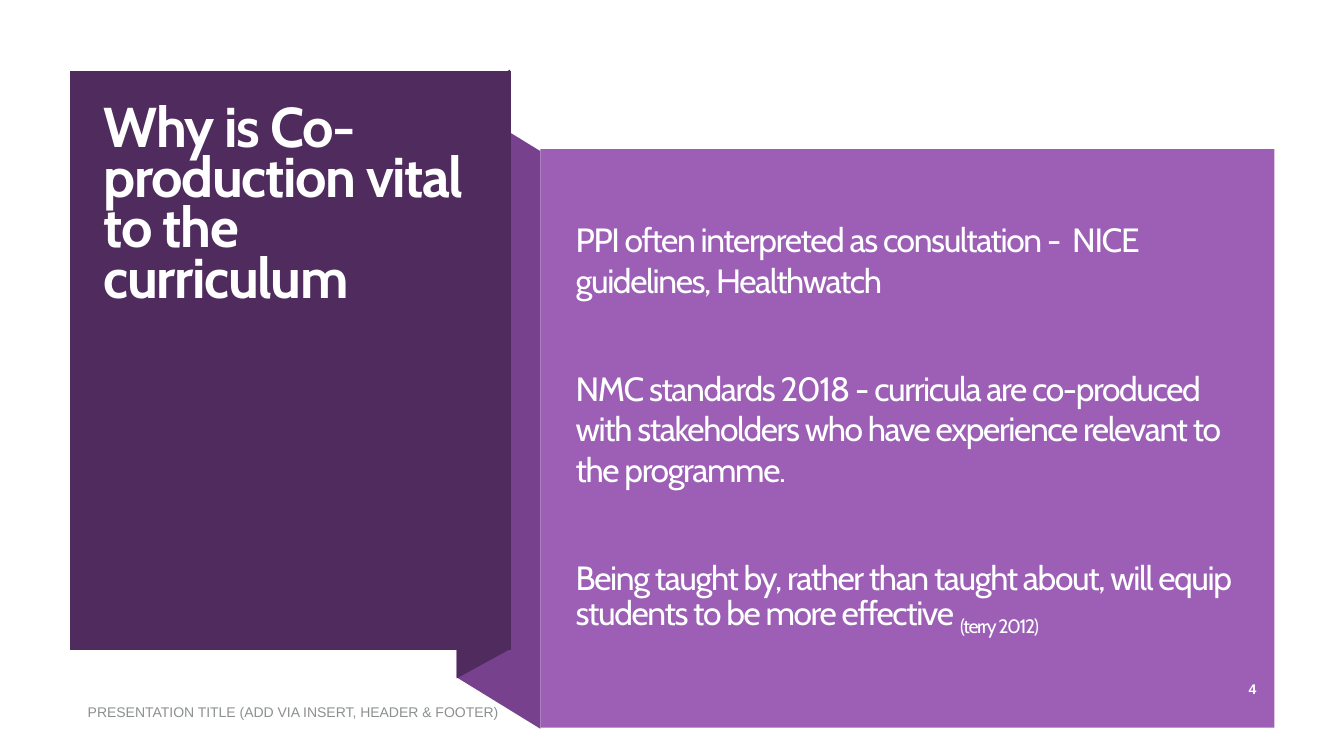
import pptx
import pptx.util
import pptx.dml.color
import pptx.enum.shapes
import pptx.enum.text

Inches, Pt = pptx.util.Inches, pptx.util.Pt
Align, Anchor = pptx.enum.text.PP_ALIGN, pptx.enum.text.MSO_ANCHOR

COLORS = {"dark": "502C5E", "fold": "77418E", "panel": "9C5FB5",
          "white": "FFFFFF", "body": "FEFFFF", "grey": "8D9090"}

TITLE = "Why is Co-production vital to the curriculum"
BODY = [
    [("PPI often interpreted as consultation -  NICE guidelines, Healthwatch", 0)],
    [("NMC standards 2018 - curricula are co-produced with stakeholders who "
      "have experience relevant to the programme.", 0)],
    [("Being taught by, rather than taught about, will equip students to be "
      "more effective ", 0), ("(terry 2012)", -25)],
]
FOOTER = "PRESENTATION TITLE (ADD VIA INSERT, HEADER & FOOTER)"
NUMBER = "4"

# Ribbon pieces as corner points, in inches
FOLD = [(5.36, 7.23), (4.53, 6.72), (4.53, 0.99), (5.36, 1.5)]
FLAP = [(5.06, 6.44), (4.53, 6.73), (4.53, 0.98), (5.06, 0.69)]
CARD = [(0.69, 0.7), (5.07, 0.7), (5.07, 6.45), (0.69, 6.45)]
PANEL = (5.36, 1.48, 7.28, 5.74)

LINE, AFTER = 28.8, 9.9
GAP = LINE + 2 * AFTER  # one empty line between body paragraphs


def paint(shape, color):
    shape.shadow.inherit = False
    shape.fill.solid()
    shape.fill.fore_color.rgb = pptx.dml.color.RGBColor.from_string(COLORS[color])
    shape.line.fill.background()


def add_rect(slide, box, color):
    kind = pptx.enum.shapes.MSO_SHAPE.RECTANGLE
    paint(slide.shapes.add_shape(kind, *map(Inches, box)), color)


def add_poly(slide, points, color):
    start, *rest = [(Inches(x), Inches(y)) for x, y in points]
    pen = slide.shapes.build_freeform(*start)
    pen.add_line_segments(rest, close=True)
    paint(pen.convert_to_shape(), color)


def set_frame(shape, anchor=Anchor.TOP):
    frame = shape.text_frame
    frame.word_wrap = True
    frame.auto_size = pptx.enum.text.MSO_AUTO_SIZE.NONE
    frame.vertical_anchor = anchor
    frame.margin_left = frame.margin_right = 0
    frame.margin_top = frame.margin_bottom = 0
    return frame


def add_box(slide, box, anchor=Anchor.TOP):
    return set_frame(slide.shapes.add_textbox(*map(Inches, box)), anchor)


def add_run(para, text, size, color, face="Cabin", bold=False, track=0, base=0):
    """Add a run; track is in points, base is a baseline shift in percent."""
    run = para.add_run()
    run.text = text
    font = run.font
    font.name, font.size, font.bold = face, Pt(size), bold
    font.color.rgb = pptx.dml.color.RGBColor.from_string(COLORS[color])
    props = run._r.get_or_add_rPr()
    if track:
        props.set("spc", str(track * 100))
    if base:
        props.set("baseline", str(base * 1000))


def add_title(slide):
    title = slide.shapes.title
    title.left, title.top, title.width, title.height = map(
        Inches, (1.03, 1.07, 3.71, 4.99))
    title.element.getparent().append(title.element)  # bring to front
    para = set_frame(title).paragraphs[0]
    para.alignment = Align.LEFT
    para.line_spacing = Pt(36)
    add_run(para, TITLE, 40, "white", bold=True, track=-1)


def add_body(slide):
    frame = add_box(slide, (5.71, 1.88, 6.51, 4.74), Anchor.MIDDLE)
    for i, runs in enumerate(BODY):
        para = frame.add_paragraph() if i else frame.paragraphs[0]
        para.line_spacing = Pt(LINE)
        para.space_after = Pt(GAP if i < len(BODY) - 1 else AFTER)
        for text, base in runs:
            add_run(para, text, 24, "body", track=-1, base=base)


def add_footer(slide):
    para = add_box(slide, (0.87, 6.98, 7.39, 0.35)).paragraphs[0]
    add_run(para, FOOTER, 10, "grey", face="Arial")
    para = add_box(slide, (11.71, 6.75, 0.75, 0.35)).paragraphs[0]
    para.alignment = Align.RIGHT
    add_run(para, NUMBER, 10, "white", face="Arial", bold=True)


def main():
    deck = pptx.Presentation()
    deck.slide_width, deck.slide_height = Inches(13.33), Inches(7.5)
    slide = deck.slides.add_slide(deck.slide_layouts[5])
    for points, color in ((FOLD, "fold"), (FLAP, "dark"), (CARD, "dark")):
        add_poly(slide, points, color)
    add_title(slide)
    add_rect(slide, PANEL, "panel")
    add_body(slide)
    add_footer(slide)
    deck.save("out.pptx")


if __name__ == "__main__":
    main()
